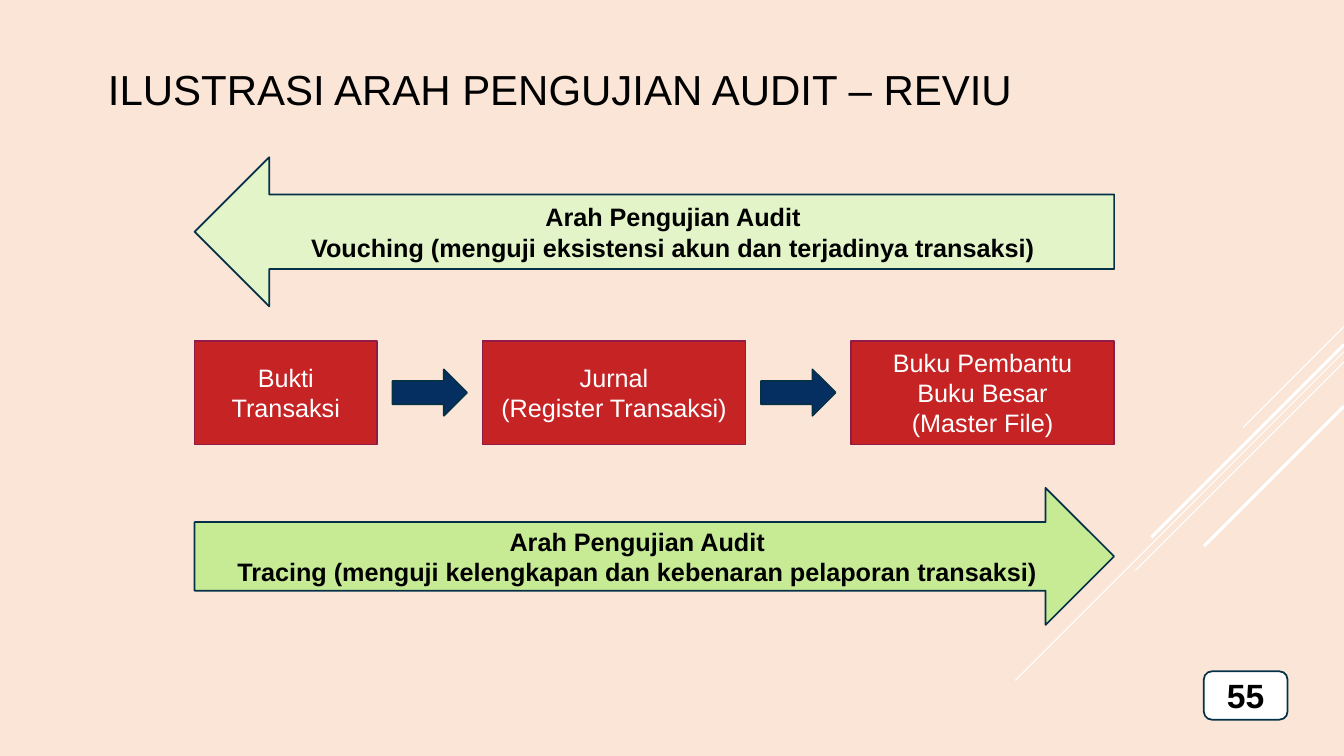
from dataclasses import dataclass
from lxml import etree
from pptx import Presentation
from pptx import util as u
from pptx.dml.color import RGBColor
from pptx.enum import shapes, text
from pptx.oxml import ns

TITLE = "ILUSTRASI ARAH PENGUJIAN AUDIT – REVIU"
PAGE = "55"
VOUCHING = "Arah Pengujian Audit\nVouching (menguji eksistensi akun dan terjadinya transaksi)"
TRACING = "Arah Pengujian Audit\nTracing (menguji kelengkapan dan kebenaran pelaporan transaksi)"
STEPS = [  # text, width
    ("Bukti\nTransaksi", 1.81),
    ("Jurnal\n(Register Transaksi)", 2.61),
    ("Buku Pembantu\nBuku Besar\n(Master File)", 2.61),
]
RAYS = [  # start on the right edge, run at 45 degrees, weight
    (3.24, 1.0, 0.75),
    (3.49, 3.26, 0.75),
    (3.59, 2.07, 0.75),
    (3.42, 1.91, 2.25),
    (4.03, 1.39, 2.25),
]


@dataclass(frozen=True)
class Theme:
    font: str = "Arial"
    title_size: int = 30
    body_size: int = 18
    page_size: int = 24
    line_width: float = 1.25
    background: str = "FAE5D7"
    ink: str = "000000"
    white: str = "FFFFFF"
    outline: str = "043148"
    vouching: str = "E3F4C9"
    tracing: str = "C7EA94"
    step: str = "C62324"
    step_outline: str = "921A46"
    flow: str = "052F61"


theme = Theme()
WIDTH, HEIGHT = 13.33, 7.5
LEFT, SPAN = 1.93, 9.12
STEP_TOP, STEP_HEIGHT = 3.38, 1.03
FLOW_WIDTH, FLOW_HEIGHT = 0.74, 0.46
KIND = shapes.MSO_SHAPE


def rgb(value):
    return RGBColor.from_string(value)


def write(frame, words, size, color, bold=False, align=text.PP_ALIGN.CENTER):
    frame.text = words
    frame.word_wrap = True
    for paragraph in frame.paragraphs:
        paragraph.alignment = align
        for run in paragraph.runs:
            run.font.name = theme.font
            run.font.size = u.Pt(size)
            run.font.bold = bold
            run.font.color.rgb = rgb(color)


def add_block(slide, kind, box, fill, outline=theme.outline):
    block = slide.shapes.add_shape(kind, *map(u.Inches, box))
    block.shadow.inherit = False
    block.fill.solid()
    block.fill.fore_color.rgb = rgb(fill)
    block.line.color.rgb = rgb(outline)
    block.line.width = u.Pt(theme.line_width)
    block.text_frame.vertical_anchor = text.MSO_ANCHOR.MIDDLE
    return block


def add_rays(slide):
    for top, run, weight in RAYS:
        ends = (WIDTH, top, WIDTH - run, top + run)
        ray = slide.shapes.add_connector(shapes.MSO_CONNECTOR.STRAIGHT, *map(u.Inches, ends))
        ray.line.color.rgb = rgb(theme.white)
        ray.line.width = u.Pt(weight)
        etree.SubElement(ray.element.spPr, ns.qn("a:effectLst"))


def add_title(slide):
    title = slide.shapes.title
    title.left, title.top, title.width, title.height = map(u.Inches, (0.97, 0.58, 11.57, 0.61))
    write(title.text_frame, TITLE, theme.title_size, theme.ink, align=text.PP_ALIGN.LEFT)
    title.text_frame.vertical_anchor = text.MSO_ANCHOR.TOP


def add_directions(slide):
    for kind, top, height, fill, words in (
        (KIND.LEFT_ARROW, 1.56, 1.48, theme.vouching, VOUCHING),
        (KIND.RIGHT_ARROW, 4.84, 1.36, theme.tracing, TRACING),
    ):
        arrow = add_block(slide, kind, (LEFT, top, SPAN, height), fill)
        write(arrow.text_frame, words, theme.body_size, theme.ink, bold=True)


def add_steps(slide):
    """Spread the steps over the span, with a flow arrow centred in each gap."""
    gap = (SPAN - sum(width for _, width in STEPS)) / (len(STEPS) - 1)
    flow_top = STEP_TOP + (STEP_HEIGHT - FLOW_HEIGHT) / 2
    left = LEFT
    for index, (words, width) in enumerate(STEPS):
        if index:
            flow_left = left - (gap + FLOW_WIDTH) / 2
            add_block(slide, KIND.RIGHT_ARROW,
                      (flow_left, flow_top, FLOW_WIDTH, FLOW_HEIGHT), theme.flow)
        step = add_block(slide, KIND.RECTANGLE, (left, STEP_TOP, width, STEP_HEIGHT),
                         theme.step, theme.step_outline)
        write(step.text_frame, words, theme.body_size, theme.white)
        left += width + gap


def main():
    deck = Presentation()
    deck.slide_width, deck.slide_height = u.Inches(WIDTH), u.Inches(HEIGHT)
    slide = deck.slides.add_slide(deck.slide_layouts.get_by_name("Title Only"))
    slide.background.fill.solid()
    slide.background.fill.fore_color.rgb = rgb(theme.background)
    add_rays(slide)
    page = add_block(slide, KIND.ROUNDED_RECTANGLE, (11.94, 6.66, 0.83, 0.48), theme.white)
    write(page.text_frame, PAGE, theme.page_size, theme.ink, bold=True)
    add_directions(slide)
    add_title(slide)
    add_steps(slide)
    deck.save("out.pptx")


if __name__ == "__main__":
    main()
